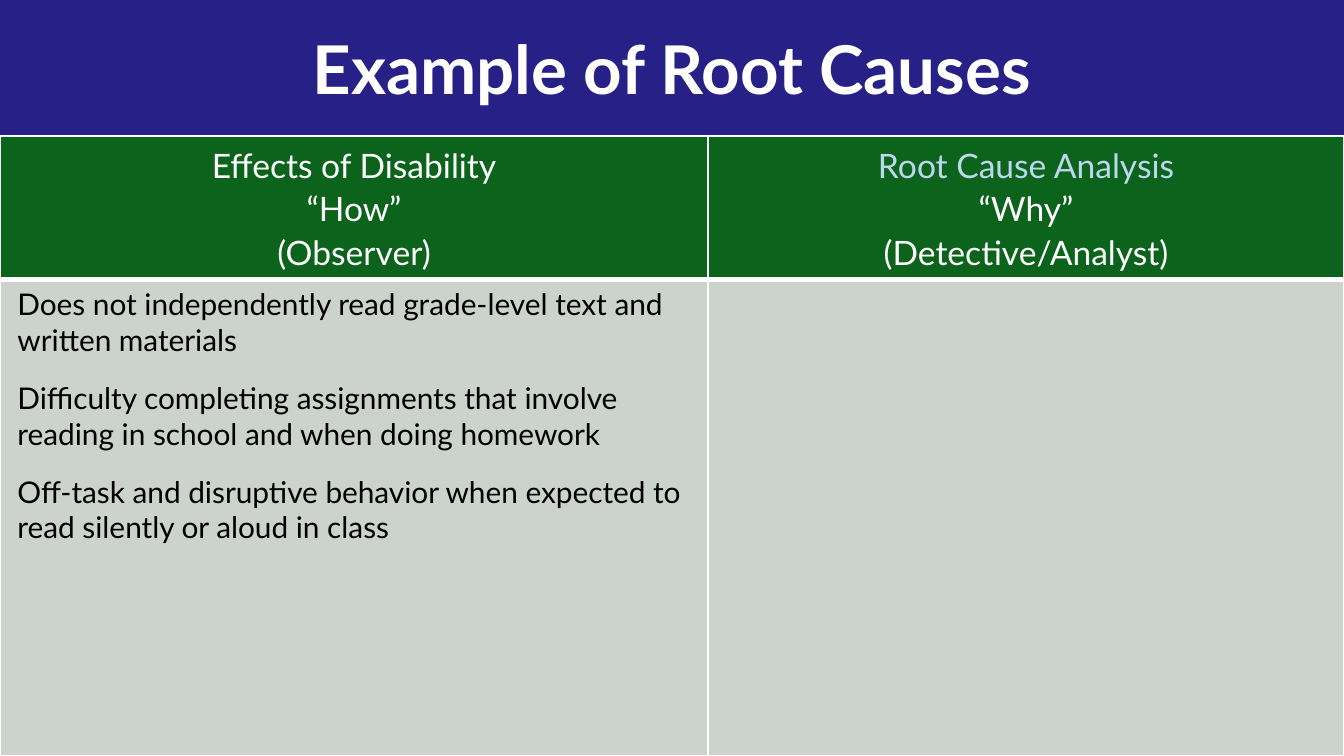
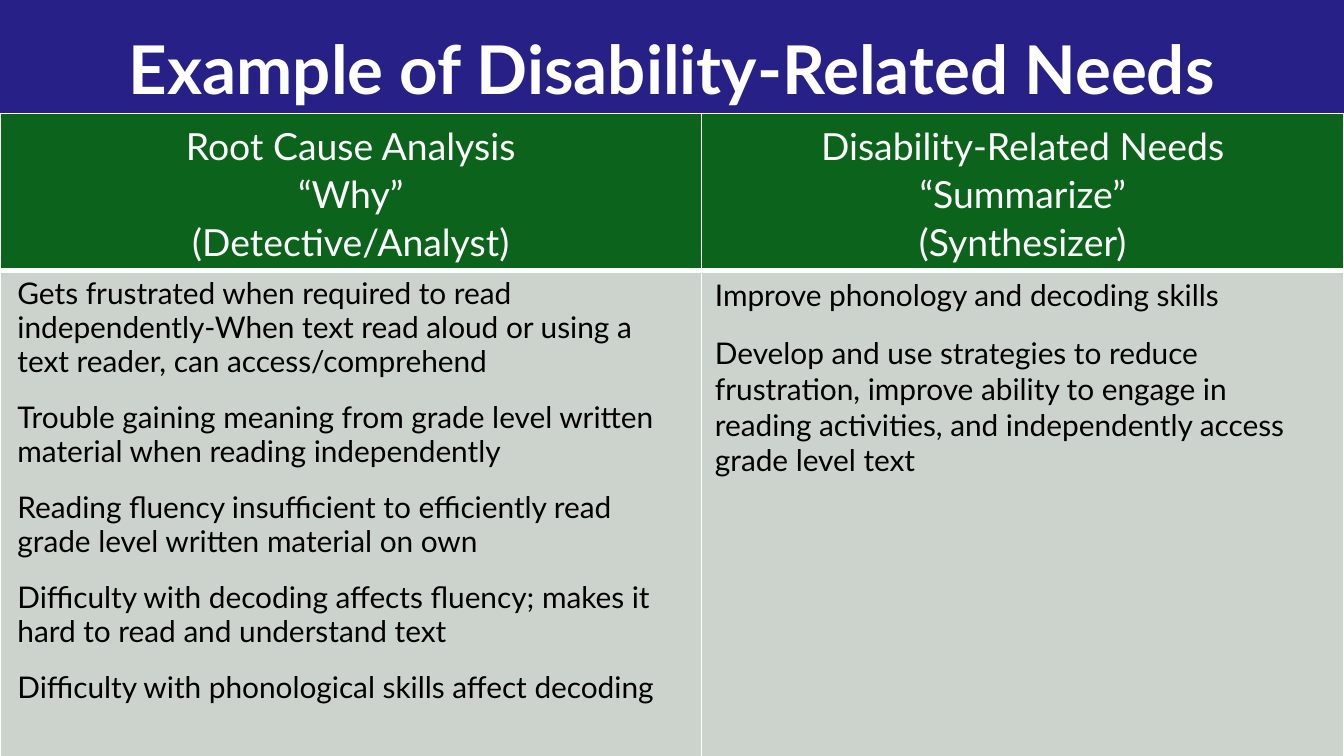
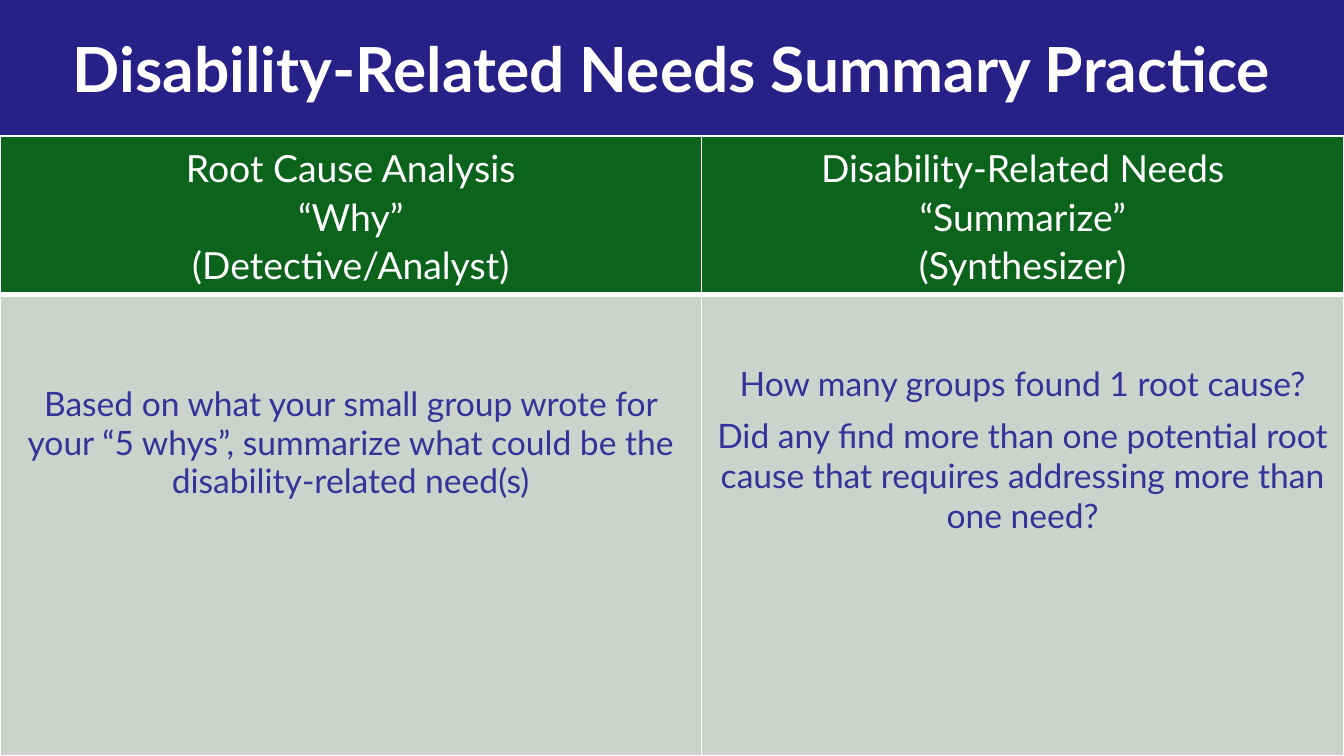
from lxml import etree
from pptx import Presentation
from pptx.dml.color import RGBColor
from pptx.enum.shapes import MSO_SHAPE as Shape
from pptx.enum.text import MSO_ANCHOR as Anchor, PP_ALIGN as Align
from pptx.oxml.ns import qn
from pptx.util import Inches, Pt

NAVY = RGBColor(0x26, 0x20, 0x87)
GREEN = RGBColor(0x0C, 0x63, 0x1B)
SAGE = RGBColor(0xCC, 0xD3, 0xCD)
INDIGO = RGBColor(0x33, 0x33, 0x99)
PALE_BLUE = RGBColor(0xBD, 0xD7, 0xEE)
WHITE = RGBColor(0xFF, 0xFF, 0xFF)
BLACK = RGBColor(0, 0, 0)

FONT = "Lato"
GRID = 10  # columns and rows on every slide
BAND_ROWS = 1.8
THIN, THICK = 1, 3
WIDE_INSET, INSET = 0.13, 0.1

WHY = ["Root Cause Analysis", "“Why”", "(Detective/Analyst)"]
SUMMARIZE = ["Disability-Related Needs", "“Summarize”", "(Synthesizer)"]


class Deck:
    def __init__(self):
        self.prs = Presentation()
        self.prs.slide_width, self.prs.slide_height = Inches(10), Inches(5.625)
        self.slide = None

    def x(self, columns):
        return int(self.prs.slide_width * columns / GRID)

    def y(self, rows):
        return int(self.prs.slide_height * rows / GRID)

    def new_slide(self, title, size=36):
        self.slide = self.prs.slides.add_slide(self.prs.slide_layouts[6])
        self.band()
        self.title(title, size)

    def band(self):
        sp = self.slide.shapes.add_shape(
            Shape.RECTANGLE, self.x(-0.01), 0, self.x(GRID + 0.01), self.y(BAND_ROWS))
        sp.shadow.inherit = False
        sp.fill.solid()
        sp.fill.fore_color.rgb = NAVY
        sp.line.fill.background()

    def title(self, text, size):
        box = self.slide.shapes.add_textbox(0, 0, self.x(GRID), self.y(BAND_ROWS))
        tf = box.text_frame
        tf.word_wrap = True
        tf.vertical_anchor = Anchor.MIDDLE
        self.set_lines(tf, [text], size, WHITE, align=Align.CENTER, bold=True)

    def set_lines(self, tf, lines, size, color, align=Align.LEFT, spacing=None, gap=0, bold=False):
        """Fill tf with one paragraph per line; gap is the space between them in points."""
        tf.text = "\n".join(lines)
        for i, p in enumerate(tf.paragraphs):
            p.alignment = align
            if spacing:
                p.line_spacing = spacing
            p.space_before = Pt(gap if i else 0)
            for r in p.runs:
                r.font.name, r.font.size, r.font.bold = FONT, Pt(size), bold
                r.font.color.rgb = color

    def table(self, split, header_rows, top=BAND_ROWS):
        """Add a two-by-two table down to the slide's foot, split at a grid column."""
        height = GRID - top
        table = self.slide.shapes.add_table(
            2, 2, 0, self.y(top), self.x(GRID), self.y(height)).table
        table.first_row = table.horz_banding = False
        for column, width in zip(table.columns, (split, GRID - split)):
            column.width = self.x(width)
        for row, rows in zip(table.rows, (header_rows, height - header_rows)):
            row.height = self.y(rows)
        for i, (fill, above, below) in enumerate(((GREEN, THIN, THICK), (SAGE, THICK, THIN))):
            for cell in table.rows[i].cells:
                self.borders(cell, L=THIN, R=THIN, T=above, B=below)
                cell.fill.solid()
                cell.fill.fore_color.rgb = fill
        return table

    def borders(self, cell, **widths):
        tc_pr = cell._tc.get_or_add_tcPr()
        for side, width in widths.items():
            ln = etree.SubElement(tc_pr, qn(f"a:ln{side}"), w=str(Pt(width)))
            fill = etree.SubElement(ln, qn("a:solidFill"))
            etree.SubElement(fill, qn("a:srgbClr"), val=str(WHITE))

    def cell_text(self, cell, lines, size, color=BLACK, inset=WIDE_INSET, top=0.05, **style):
        cell.margin_left = cell.margin_right = Inches(inset)
        cell.margin_top = Inches(top)
        self.set_lines(cell.text_frame, lines, size, color, **style)

    def headers(self, table, left, right, size, right_inset=INSET):
        for column, lines, inset in ((0, left, WIDE_INSET), (1, right, right_inset)):
            self.cell_text(table.cell(0, column), lines, size, WHITE, inset,
                           align=Align.CENTER, spacing=1.07)


def root_causes(deck):
    deck.new_slide("Example of Root Causes")
    table = deck.table(split=5.27, header_rows=1.9)
    deck.headers(table, ["Effects of Disability", "“How”", "(Observer)"], WHY, 18, WIDE_INSET)
    topic = table.cell(0, 1).text_frame.paragraphs[0].runs[0]
    topic.font.color.rgb = PALE_BLUE
    deck.cell_text(table.cell(1, 0), [
        "Does not independently read grade-level text and written materials",
        "Difficulty completing assignments that involve reading in school and when doing homework",
        "Off-task and disruptive behavior when expected to read silently or aloud in class",
    ], 16, gap=12)


def related_needs(deck):
    deck.new_slide("Example of Disability-Related Needs")
    table = deck.table(split=5.22, header_rows=2.05, top=1.5)
    deck.headers(table, WHY, SUMMARIZE, 20)
    deck.cell_text(table.cell(1, 0), [
        "Gets frustrated when required to read independently-When text read aloud or using a "
        "text reader, can access/comprehend",
        "Trouble gaining meaning from grade level written material when reading independently",
        "Reading fluency insufficient to efficiently read grade level written material on own",
        "Difficulty with decoding affects fluency; makes it hard to read and understand text",
        "Difficulty with phonological skills affect decoding",
    ], 16, spacing=0.95, gap=12)
    deck.cell_text(table.cell(1, 1), [
        "Improve phonology and decoding skills",
        "Develop and use strategies to reduce frustration, improve ability to engage in "
        "reading activities, and independently access grade level text",
    ], 16, inset=INSET, gap=12)


def summary_practice(deck):
    deck.new_slide("Disability-Related Needs Summary Practice", size=33.3)
    table = deck.table(split=5.22, header_rows=2.1)
    deck.headers(table, WHY, SUMMARIZE, 20)
    deck.cell_text(table.cell(1, 0), [
        "Based on what your small group wrote for your “5 whys”, summarize what could be the "
        "disability-related need(s)",
    ], 18, INDIGO, top=0.68, align=Align.CENTER, spacing=0.95)
    deck.cell_text(table.cell(1, 1), [
        "How many groups found 1 root cause?",
        "Did any find more than one potential root cause that requires addressing more than "
        "one need?",
    ], 18, INDIGO, INSET, top=0.51, align=Align.CENTER, gap=6)


def main():
    deck = Deck()
    for build in (root_causes, related_needs, summary_practice):
        build(deck)
    deck.prs.save("out.pptx")


if __name__ == "__main__":
    main()
